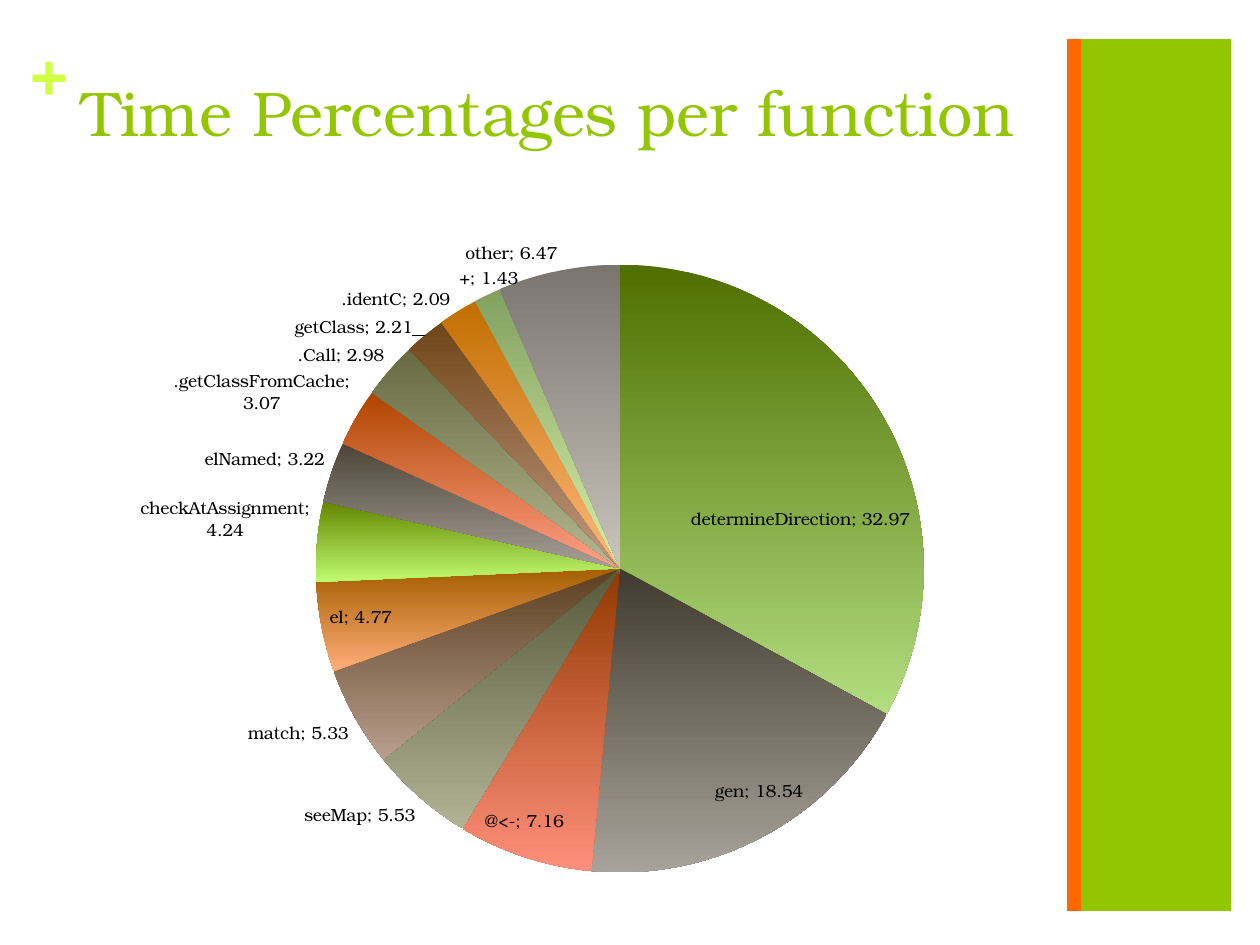
from lxml import etree
from pptx import Presentation
from pptx.chart.data import CategoryChartData
from pptx.dml.color import RGBColor
from pptx.enum.chart import XL_CHART_TYPE, XL_LABEL_POSITION
from pptx.enum.shapes import MSO_SHAPE
from pptx.enum.text import MSO_ANCHOR, PP_ALIGN
from pptx.oxml.ns import qn
from pptx.util import Inches, Pt

FONT = "TeX Gyre Bonum"
GREEN = "94C600"
ORANGE = "FF6700"
LIME = "D0FF44"

# function, share of time, top and bottom colour of the slice
SLICES = [
    ("determineDirection", 32.97, "4F6F00", "B2DD80"),
    ("gen", 18.54, "413A2E", "A8A39A"),
    ("@<-", 7.16, "923800", "FF8F7A"),
    ("seeMap", 5.53, "56593A", "B0B495"),
    ("match", 5.33, "5C3F20", "B89E8E"),
    ("el", 4.77, "A55E00", "FFAD78"),
    ("checkAtAssignment", 4.24, "638600", "BFFA70"),
    ("elNamed", 3.22, "4C4538", "A8A096"),
    (".getClassFromCache", 3.07, "B04500", "FFA088"),
    (".Call", 2.98, "666B42", "B4B890"),
    ("getClass", 2.21, "70471A", "C09880"),
    (".identC", 2.09, "C26E00", "FFB87A"),
    ("+", 1.43, "82A060", "D8F0A8"),
    ("other", 6.47, "7A756E", "C8C4BC"),
]


def color(value):
    """Turn a hex string into a colour."""
    return RGBColor.from_string(value)


def place(shape, left, top, width, height):
    """Move and size a shape, in inches."""
    shape.left, shape.top = Inches(left), Inches(top)
    shape.width, shape.height = Inches(width), Inches(height)


def style_font(font, size, value, bold=False):
    """Set the typeface, size, colour and weight of a font."""
    font.name, font.size, font.bold = FONT, Pt(size), bold
    font.color.rgb = color(value)


def write(frame, text, size, value, bold=False):
    """Write one left-aligned run at the top of a text frame."""
    frame.word_wrap = True
    frame.vertical_anchor = MSO_ANCHOR.TOP
    para = frame.paragraphs[0]
    para.alignment = PP_ALIGN.LEFT
    span = para.add_run()
    span.text = text
    style_font(span.font, size, value, bold)


def add_band(page, left, width, value):
    """Add a plain vertical band at the right of the page."""
    band = page.shapes.add_shape(MSO_SHAPE.RECTANGLE, Inches(left), Inches(0.31),
                                 Inches(width), Inches(6.92))
    band.shadow.inherit = False
    band.fill.solid()
    band.fill.fore_color.rgb = color(value)
    band.line.fill.background()


def add_plus(page):
    """Add the plus sign beside the title."""
    box = page.shapes.add_textbox(Inches(0.24), Inches(0.25), Inches(0.29), Inches(0.61))
    frame = box.text_frame
    frame.margin_left = frame.margin_right = frame.margin_top = frame.margin_bottom = 0
    write(frame, "+", 36, LIME, bold=True)


def add_title(page, text):
    """Place and fill the title placeholder."""
    title = page.shapes.title
    place(title, 0.55, 0.53, 8.26, 1.22)
    write(title.text_frame, text, 36, GREEN)


def set_plot_layout(chart, **fractions):
    """Fix the inner plot area as fractions of the chart."""
    area = chart.plots[0]._element.getparent()
    for old in area.findall(qn("c:layout")):
        area.remove(old)
    layout = etree.Element(qn("c:layout"))
    manual = etree.SubElement(layout, qn("c:manualLayout"))
    settings = {"layoutTarget": "inner", "xMode": "edge", "yMode": "edge", **fractions}
    for name, value in settings.items():
        etree.SubElement(manual, qn(f"c:{name}")).set("val", str(value))
    area.insert(0, layout)


def add_labels(plot):
    """Label each slice with its function and share."""
    plot.has_data_labels = True
    labels = plot.data_labels
    labels.show_category_name = labels.show_value = True
    labels.show_percentage = False
    labels.position = XL_LABEL_POSITION.BEST_FIT
    style_font(labels.font, 10, "000000")
    separator = etree.Element(qn("c:separator"))
    separator.text = "; "
    labels._element.find(qn("c:showBubbleSize")).addnext(separator)


def add_pie(page):
    """Add the pie of time per function with graded slices."""
    names, shares, tops, bottoms = zip(*SLICES)
    data = CategoryChartData()
    data.categories = names
    data.add_series("Series 1", shares)
    chart = page.shapes.add_chart(XL_CHART_TYPE.PIE, Inches(0.33), Inches(1.74),
                                  Inches(7.78), Inches(5.49), data).chart
    chart.has_legend = chart.has_title = False
    style_font(chart.font, 10, "000000")
    plot = chart.plots[0]
    plot.vary_by_categories = True
    for index, shades in enumerate(zip(tops, bottoms)):
        form = plot.series[0].points[index].format
        form.line.fill.background()
        form.fill.gradient()
        form.fill.gradient_angle = 270
        for stop, shade in zip(form.fill.gradient_stops, shades):
            stop.color.rgb = color(shade)
    add_labels(plot)
    set_plot_layout(chart, x=0.28, y=0.065, w=0.62, h=0.88)


def main():
    """Build the slide and save it."""
    deck = Presentation()
    deck.slide_width, deck.slide_height = Inches(10), Inches(7.5)
    page = deck.slides.add_slide(deck.slide_layouts[5])
    add_band(page, 8.57, 1.2, GREEN)
    add_plus(page)
    add_band(page, 8.47, 0.11, ORANGE)
    add_title(page, "Time Percentages per function")
    add_pie(page)
    deck.save("out.pptx")


if __name__ == "__main__":
    main()
